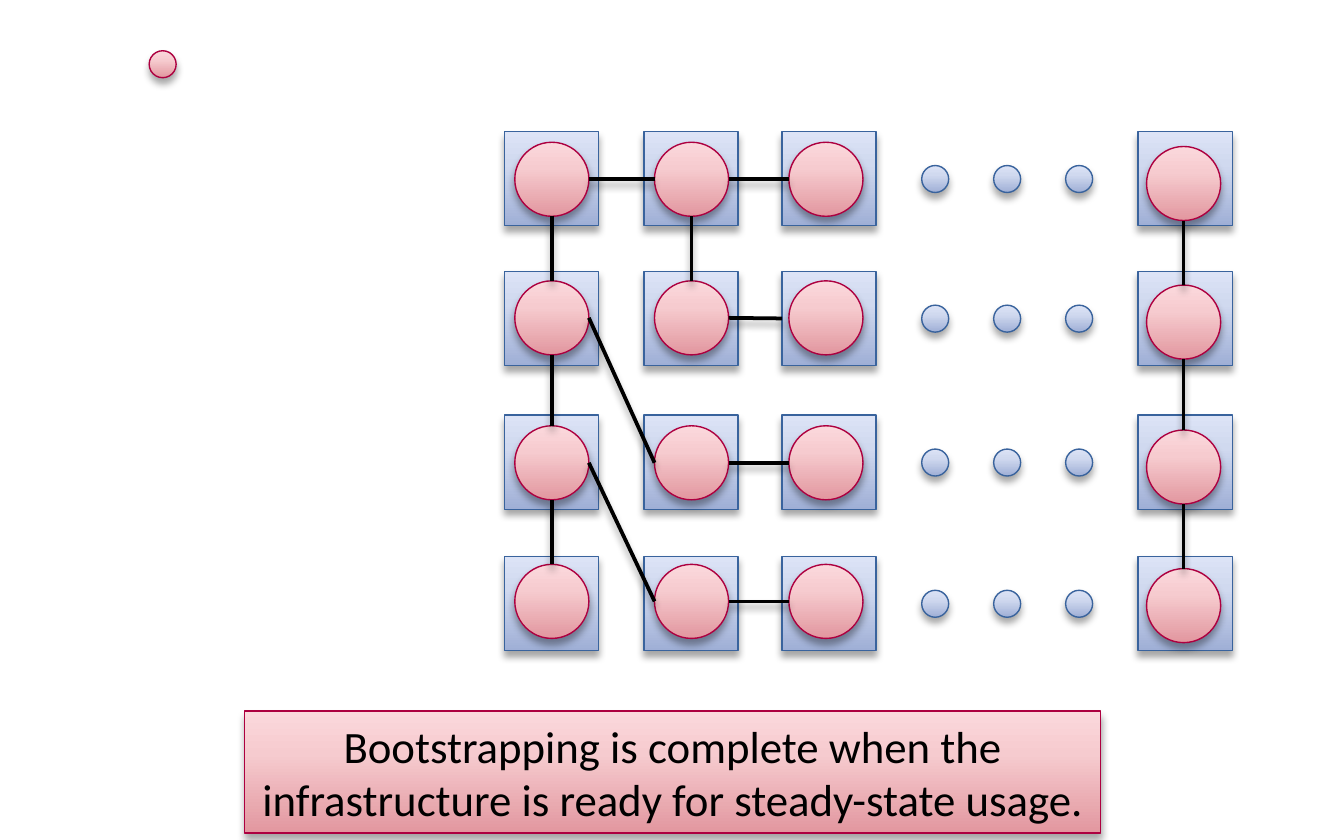
from copy import deepcopy
from itertools import product
from lxml.etree import SubElement
from pptx import Presentation
from pptx.dml.color import RGBColor
from pptx.enum.shapes import MSO_CONNECTOR, MSO_SHAPE
from pptx.enum.text import MSO_ANCHOR, MSO_AUTO_SIZE, PP_ALIGN
from pptx.oxml.ns import qn
from pptx.util import Cm, Pt

BLUE = (("9FAFD6", "D0D9EF", "DCE3F6"), "39639D")
PINK = (("E2979F", "F6CBCF", "FBD8DC"), "AD0040")


def tint(color, code):
    color.rgb = RGBColor.from_string(code)


class Sketch:
    font = "Calibri"
    size = Pt(24)
    ink = "000000"

    def __init__(self, slide):
        self.shapes = slide.shapes

    def shade(self, props):
        list_ = props.find(qn("a:effectLst"))
        if list_ is None:
            list_ = SubElement(props, qn("a:effectLst"))
        cast = SubElement(list_, qn("a:outerShdw"), blurRad=str(Pt(4)),
                          dist=str(Pt(3)), dir="5400000", rotWithShape="0")
        color = SubElement(cast, qn("a:srgbClr"), val=self.ink)
        SubElement(color, qn("a:alpha"), val="35000")

    def shape(self, kind, look, x, y, w, h):
        item = self.shapes.add_shape(kind, Cm(x), Cm(y), Cm(w), Cm(h))
        stops, edge = look
        item.fill.gradient()
        item.fill.gradient_angle = 90
        props = item._element.spPr
        ramp = props.find(".//" + qn("a:gsLst"))
        ramp.append(deepcopy(ramp[-1]))
        for stop, code, spot in zip(item.fill.gradient_stops, stops, (0, 0.65, 1)):
            tint(stop.color, code)
            stop.position = spot
        tint(item.line.color, edge)
        item.line.width = Pt(0.75)
        item.shadow.inherit = False
        self.shade(props)
        return item

    def box(self, look, x, y, w, h):
        return self.shape(MSO_SHAPE.RECTANGLE, look, x, y, w, h)

    def disc(self, look, x, y, d):
        return self.shape(MSO_SHAPE.OVAL, look, x, y, d, d)

    def link(self, start, end, down=False, glue=False):
        if down:
            ends = (start.left + start.width // 2, start.top + start.height,
                    end.left + end.width // 2, end.top)
        else:
            ends = (start.left + start.width, start.top + start.height // 2,
                    end.left, end.top + end.height // 2)
        wire = self.shapes.add_connector(MSO_CONNECTOR.STRAIGHT, *ends)
        if glue:
            wire.end_connect(end, 1)
        tint(wire.line.color, self.ink)
        wire.line.width = Pt(2)
        self.shade(wire._element.spPr)

    def text(self, item, lines):
        frame = item.text_frame
        frame.word_wrap = False
        frame.auto_size = MSO_AUTO_SIZE.SHAPE_TO_FIT_TEXT
        frame.vertical_anchor = MSO_ANCHOR.MIDDLE
        para = frame.paragraphs[0]
        para.alignment = PP_ALIGN.CENTER
        for i, line in enumerate(lines):
            if i:
                para.add_line_break()
            run = para.add_run()
            run.text = line
            run.font.name = self.font
            run.font.size = self.size
            tint(run.font.color, self.ink)


def main():
    deck = Presentation()
    deck.slide_width, deck.slide_height = Cm(25.4), Cm(15.88)
    art = Sketch(deck.slides.add_slide(deck.slide_layouts[6]))

    cells, nodes = {}, {}
    for row, y in enumerate((2.49, 5.13, 7.85, 10.52)):
        for col, x in enumerate((9.53, 12.17, 14.78, 21.51)):
            cells[row, col] = art.box(BLUE, x, y, 1.78, 1.78)
        for i in range(3):
            art.disc(BLUE, 17.42 + 1.36 * i, y + 0.64, 0.51)

    columns = ((9.73, 0), (12.37, 0), (14.91, 0), (21.67, 0.08))
    rows = (2.69, 5.31, 8.05, 10.67)
    for (col, (x, drop)), (row, y) in product(enumerate(columns), enumerate(rows)):
        nodes[row, col] = art.disc(PINK, x, y + drop, 1.4)

    for col, count in ((0, 3), (1, 1), (3, 3)):
        for row in range(count):
            art.link(nodes[row, col], nodes[row + 1, col], down=True)
    for start, end in (((0, 0), (0, 1)), ((0, 1), (0, 2)), ((2, 1), (2, 2)),
                       ((3, 1), (3, 2)), ((1, 0), (2, 1)), ((2, 0), (3, 1))):
        art.link(nodes[start], nodes[end])
    art.link(nodes[1, 1], cells[1, 2], glue=True)

    art.disc(PINK, 2.82, 0.96, 0.51)
    note = art.box(PINK, 4.62, 13.44, 16.18, 2.31)
    art.text(note, ("Bootstrapping is complete when the",
                    "infrastructure is ready for steady-state usage."))
    deck.save("out.pptx")


if __name__ == "__main__":
    main()
